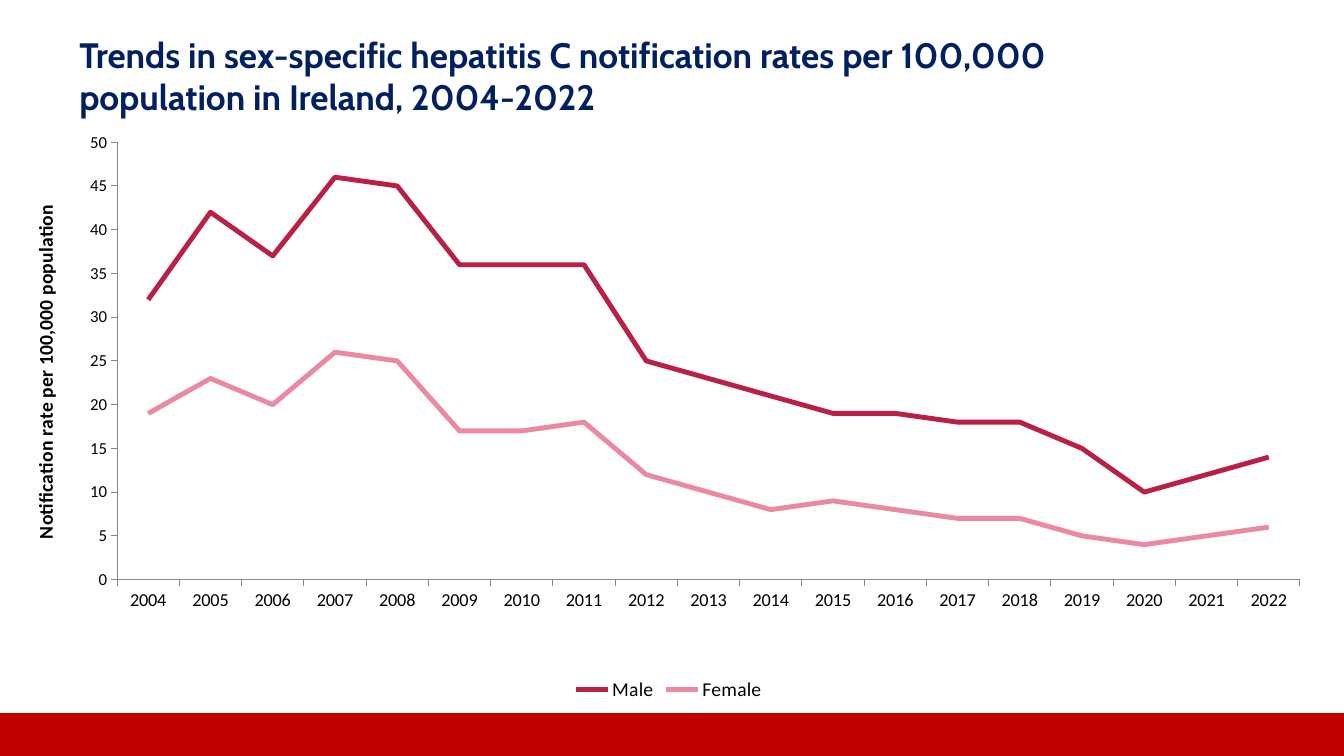
import pptx
import pptx.chart.data
import pptx.dml.color
import pptx.enum.chart
import pptx.enum.shapes
import pptx.enum.text
import pptx.util
from lxml import etree

Pt = pptx.util.Pt
RGBColor = pptx.dml.color.RGBColor

NAVY = RGBColor(0x00, 0x20, 0x60)
RED = RGBColor(0xC0, 0x00, 0x00)
CRIMSON = RGBColor(0xBA, 0x1F, 0x46)
PINK = RGBColor(0xEB, 0x89, 0xA3)
GREY = RGBColor(0x86, 0x86, 0x86)
BLACK = RGBColor(0x00, 0x00, 0x00)

YEARS = [str(year) for year in range(2004, 2023)]
RATES = [
    ("Male", CRIMSON, [32, 42, 37, 46, 45, 36, 36, 36, 25, 23,
                       21, 19, 19, 18, 18, 15, 10, 12, 14]),
    ("Female", PINK, [19, 23, 20, 26, 25, 17, 17, 18, 12, 10,
                      8, 9, 8, 7, 7, 5, 4, 5, 6]),
]


class SlideBuilder:
    """Holds the style and the current slide."""
    heading_font = "Cabin"
    chart_font = "Calibri"

    def __init__(self, slide):
        self.slide = slide

    def style_font(self, font, name, size, color, bold=False):
        font.name, font.size, font.bold = name, Pt(size), bold
        font.color.rgb = color

    def band(self, x, y, w, h, color):
        sp = self.slide.shapes.add_shape(
            pptx.enum.shapes.MSO_SHAPE.RECTANGLE, Pt(x), Pt(y), Pt(w), Pt(h))
        sp.shadow.inherit = False
        sp.fill.solid()
        sp.fill.fore_color.rgb = color
        sp.line.color.rgb = color
        sp.line.width = Pt(2)

    def title(self, x, y, w, h, text, size):
        tf = self.slide.shapes.add_textbox(Pt(x), Pt(y), Pt(w), Pt(h)).text_frame
        tf.word_wrap = True
        tf.vertical_anchor = pptx.enum.text.MSO_ANCHOR.MIDDLE
        tf.margin_left = tf.margin_right = Pt(8.64)
        tf.margin_top = tf.margin_bottom = Pt(4.32)
        r = tf.paragraphs[0].add_run()
        r.text = text
        self.style_font(r.font, self.heading_font, size, NAVY, bold=True)

    def axis(self, axis, size):
        axis.has_major_gridlines = False
        axis.major_tick_mark = pptx.enum.chart.XL_TICK_MARK.OUTSIDE
        axis.minor_tick_mark = pptx.enum.chart.XL_TICK_MARK.NONE
        axis.format.line.color.rgb = GREY
        axis.format.line.width = Pt(0.75)
        self.style_font(axis.tick_labels.font, self.chart_font, size, BLACK)

    def plot_layout(self, chart, x, y, w, h):
        area = chart._chartSpace.chart.plotArea
        for old in area.findall(pptx.oxml.ns.qn("c:layout")):
            area.remove(old)
        layout = etree.Element(pptx.oxml.ns.qn("c:layout"))
        manual = etree.SubElement(layout, pptx.oxml.ns.qn("c:manualLayout"))
        settings = [("layoutTarget", "inner"), ("xMode", "edge"), ("yMode", "edge"),
                    ("x", x), ("y", y), ("w", w), ("h", h)]
        for tag, value in settings:
            etree.SubElement(manual, pptx.oxml.ns.qn("c:" + tag), val=str(value))
        area.insert(0, layout)

    def line_chart(self, x, y, w, h, categories, series, value_title):
        data = pptx.chart.data.CategoryChartData(number_format="0")
        data.categories = categories
        for name, _, values in series:
            data.add_series(name, values)
        chart = self.slide.shapes.add_chart(
            pptx.enum.chart.XL_CHART_TYPE.LINE,
            Pt(x), Pt(y), Pt(w), Pt(h), data).chart
        chart.has_title = False
        self.style_font(chart.font, self.chart_font, 10, BLACK)

        # Lines
        plot = chart.plots[0]
        plot.vary_by_categories = False
        for line, (_, color, _) in zip(plot.series, series):
            line.smooth = False
            line.marker.style = pptx.enum.chart.XL_MARKER_STYLE.NONE
            line.format.line.color.rgb = color
            line.format.line.width = Pt(3.5)

        # Axes
        self.axis(chart.category_axis, 13)
        value_axis = chart.value_axis
        self.axis(value_axis, 12)
        value_axis.minimum_scale, value_axis.maximum_scale = 0, 50
        value_axis.major_unit = 5
        r = value_axis.axis_title.text_frame.paragraphs[0].add_run()
        r.text = value_title
        self.style_font(r.font, self.chart_font, 14, BLACK, bold=True)

        # Legend
        chart.has_legend = True
        chart.legend.position = pptx.enum.chart.XL_LEGEND_POSITION.BOTTOM
        chart.legend.include_in_layout = False
        self.style_font(chart.legend.font, self.chart_font, 14, BLACK)
        self.plot_layout(chart, 0.076, 0.042, 0.909, 0.744)


def main():
    prs = pptx.Presentation()
    prs.slide_width, prs.slide_height = Pt(960), Pt(540)
    s = SlideBuilder(prs.slides.add_slide(prs.slide_layouts[6]))

    # Footer band and heading
    s.band(0, 510, 960, 30, RED)
    s.title(48, 24, 786, 60,
            "Trends in sex-specific hepatitis C notification rates per 100,000 "
            "population in Ireland, 2004-2022", 25.2)

    # Notification rates by sex
    s.line_chart(13, 84, 929.5, 420, YEARS, RATES,
                 "Notification rate per 100,000 population")
    prs.save("out.pptx")


if __name__ == "__main__":
    main()
